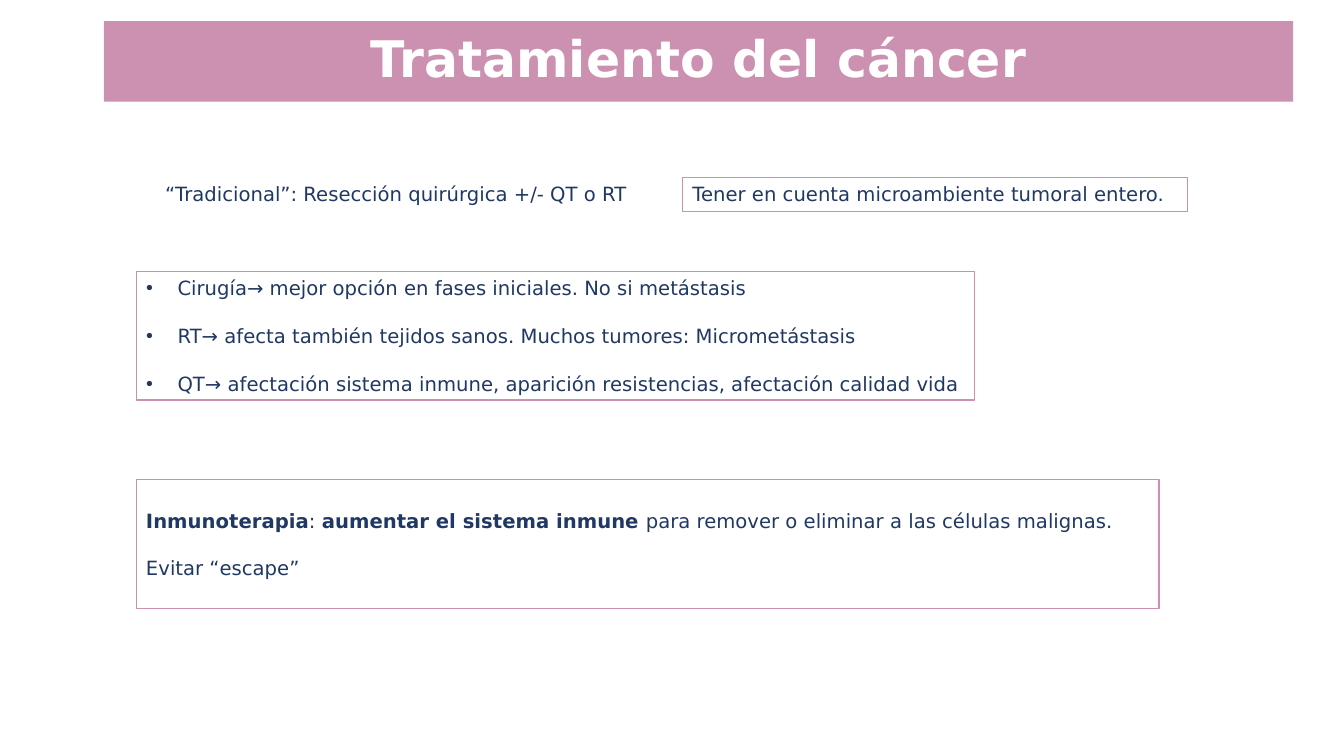
import pptx
import pptx.dml.color
import pptx.enum.text
import pptx.oxml
import pptx.oxml.ns
import pptx.util

Cm, Pt = pptx.util.Cm, pptx.util.Pt
ALIGN, ANCHOR = pptx.enum.text.PP_ALIGN, pptx.enum.text.MSO_ANCHOR
PINK, NAVY, WHITE = "CC90B0", "203864", "FFFFFF"
BODY = {"name": "DejaVu Sans", "size": Pt(14), "bold": False}
HEAD = {**BODY, "size": Pt(36), "bold": True}
PLAIN = {"alignment": ALIGN.LEFT, "line_spacing": 1.0, "space_before": Pt(0)}
GAP = Pt(17.3)
LEFT = 3.43


def tint(hue):
    return pptx.dml.color.RGBColor.from_string(hue)


def apply(item, style):
    for key, value in style.items():
        setattr(item, key, value)


def place(shape, box):
    sides = ("left", "top", "width", "height")
    apply(shape, dict(zip(sides, map(Cm, box))))


def outline(shape):
    shape.line.color.rgb = tint(PINK)
    shape.line.width = Pt(0.75)


def bullet(para):
    props = para._p.get_or_add_pPr()
    props.set("marL", str(Cm(0.79)))
    props.set("indent", str(-Cm(0.79)))
    space = pptx.oxml.ns.nsdecls("a")
    props.append(pptx.oxml.parse_xml(f'<a:buFont {space} typeface="Arial"/>'))
    props.append(pptx.oxml.parse_xml(f'<a:buChar {space} char="•"/>'))


def write(shape, paras, font=BODY, hue=NAVY, anchor=ANCHOR.TOP, marks=False, **look):
    """Each paragraph is a list of (text, bold) runs."""
    frame = shape.text_frame
    apply(frame, {"word_wrap": True, "vertical_anchor": anchor,
                  "auto_size": pptx.enum.text.MSO_AUTO_SIZE.NONE})
    for i, runs in enumerate(paras):
        para = frame.add_paragraph() if i else frame.paragraphs[0]
        apply(para, {**PLAIN, **look})
        if i:
            para.space_before = GAP
        if marks:
            bullet(para)
        for text, bold in runs:
            run = para.add_run()
            run.text = text
            apply(run.font, {**font, "bold": bold})
            run.font.color.rgb = tint(hue)


def title(slide, box):
    shape = slide.shapes.title
    place(shape, box)
    shape.fill.solid()
    shape.fill.fore_color.rgb = tint(PINK)
    write(shape, [[("Tratamiento del cáncer", True)]], HEAD, WHITE,
          ANCHOR.MIDDLE, alignment=ALIGN.CENTER, line_spacing=0.9)


def classic(slide, box):
    # Plain label on the left, framed remark on the right
    left, top, width, high = box
    label = slide.shapes.add_textbox(*map(Cm, (left, top, 13.26, high)))
    write(label, [[("“Tradicional”: Resección quirúrgica +/- QT o RT ", False)]],
          alignment=ALIGN.CENTER)
    wide = 12.73
    remark = slide.shapes.add_textbox(*map(Cm, (left + width - wide, top, wide, high)))
    outline(remark)
    write(remark, [[("Tener en cuenta microambiente tumoral entero.", False)]])


def options(slide, box):
    shape = slide.placeholders[1]
    place(shape, box)
    outline(shape)
    lines = ("Cirugía→ mejor opción en fases iniciales. No si metástasis",
             "RT→ afecta también tejidos sanos. Muchos tumores: Micrometástasis",
             "QT→ afectación sistema inmune, aparición resistencias, afectación calidad vida")
    write(shape, [[(line, False)] for line in lines], marks=True)


def immune(slide, box):
    shape = slide.shapes.add_textbox(*map(Cm, box))
    outline(shape)
    write(shape, [
        [("Inmunoterapia", True), (": ", False), ("aumentar el sistema inmune ", True),
         ("para remover o eliminar a las células malignas.", False)],
        [("Evitar “escape”", False)],
    ], anchor=ANCHOR.MIDDLE)


def main():
    deck = pptx.Presentation()
    deck.slide_width, deck.slide_height = Cm(33.87), Cm(19.05)
    slide = deck.slides.add_slide(deck.slide_layouts[1])
    title(slide, (2.62, 0.53, 29.97, 2.03))
    classic(slide, (LEFT, 4.47, 26.5, 0.86))
    options(slide, (LEFT, 6.83, 21.13, 3.25))
    immune(slide, (LEFT, 12.09, 25.78, 3.25))
    deck.save("out.pptx")


if __name__ == "__main__":
    main()
